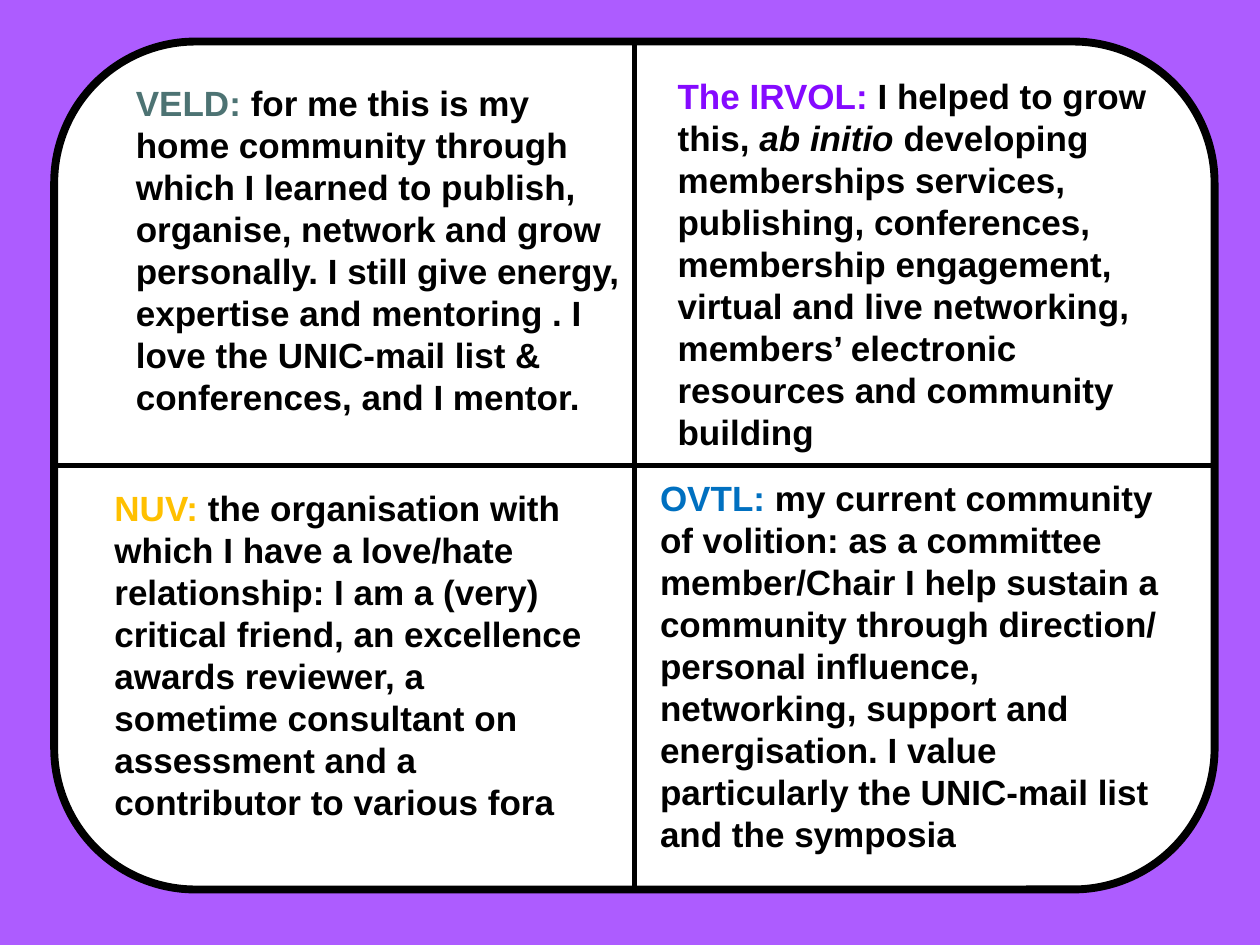
from pptx import Presentation
from pptx.dml.color import RGBColor
from pptx.enum import shapes, text
from pptx.oxml.ns import qn
from pptx.util import Inches, Pt

PURPLE = RGBColor(0xAD, 0x5C, 0xFF)
WHITE = RGBColor(0xFF, 0xFF, 0xFF)
BLACK = RGBColor(0x00, 0x00, 0x00)
TEAL = RGBColor(0x4D, 0x73, 0x73)
VIOLET = RGBColor(0x85, 0x0A, 0xFF)
GOLD = RGBColor(0xFF, 0xC0, 0x00)
BLUE = RGBColor(0x00, 0x70, 0xC0)

QUADRANTS = [
    ((0.98, 0.6, 4.04, 2.79), "VELD: ", TEAL,
     [("for me this is my home community through which I learned to publish, "
       "organise, network and grow personally. I still give energy, expertise "
       "and mentoring . I love the UNIC-mail list & conferences, and I mentor.", False)]),
    ((5.28, 0.54, 4.1, 3.13), "The IRVOL: ", VIOLET,
     [("I helped to grow this, ", False),
      ("ab initio ", True),
      ("developing memberships services, publishing, conferences, membership "
       "engagement, virtual and live networking, members’ electronic resources "
       "and community building", False)]),
    ((0.81, 3.81, 3.97, 2.79), "NUV: ", GOLD,
     [("the organisation with which I have a love/hate relationship: I am a "
       "(very) critical friend, an excellence awards reviewer, a sometime "
       "consultant on assessment and a contributor to various fora", False)]),
    ((5.14, 3.73, 4.24, 3.13), "OVTL: ", BLUE,
     [("my current community of volition: as a committee member/Chair I help "
       "sustain a community through direction/ personal influence, networking, "
       "support and energisation. I value particularly the UNIC-mail list and "
       "the symposia", False)]),
]


def add_run(p, content, color=BLACK, italic=False, size=20):
    r = p.add_run()
    r.text = content
    r.font.name = "Arial"
    r.font.size = Pt(size)
    r.font.bold = True
    r.font.italic = italic
    r.font.color.rgb = color


def add_frame(s):
    box = [Inches(v) for v in (0.43, 0.33, 9.21, 6.73)]
    sp = s.shapes.add_shape(shapes.MSO_SHAPE.ROUNDED_RECTANGLE, *box)
    sp.shadow.inherit = False
    sp.fill.solid()
    sp.fill.fore_color.rgb = WHITE
    sp.line.color.rgb = BLACK
    sp.line.width = Pt(4.5)
    return sp


def add_divider(s, frame, start, end):
    line = s.shapes.add_connector(shapes.MSO_CONNECTOR.STRAIGHT, 0, 0, 0, 0)
    line.begin_connect(frame, start)
    line.end_connect(frame, end)
    line.line.color.rgb = BLACK
    line.line.width = Pt(3)
    sp_pr = line._element.spPr
    sp_pr.append(sp_pr.makeelement(qn("a:effectLst"), {}))


def add_quadrant(s, box, heading, color, body):
    tf = s.shapes.add_textbox(*[Inches(v) for v in box]).text_frame
    tf.word_wrap = True
    tf.auto_size = text.MSO_AUTO_SIZE.SHAPE_TO_FIT_TEXT
    p = tf.paragraphs[0]
    add_run(p, heading, color=color)
    for content, italic in body:
        add_run(p, content, italic=italic)


def main():
    prs = Presentation()
    prs.slide_width = Inches(10)
    prs.slide_height = Inches(7.5)
    s = prs.slides.add_slide(prs.slide_layouts[6])
    s.background.fill.solid()
    s.background.fill.fore_color.rgb = PURPLE
    frame = add_frame(s)
    add_divider(s, frame, 0, 2)
    add_divider(s, frame, 1, 3)
    for quadrant in QUADRANTS:
        add_quadrant(s, *quadrant)
    prs.save("out.pptx")


if __name__ == "__main__":
    main()
